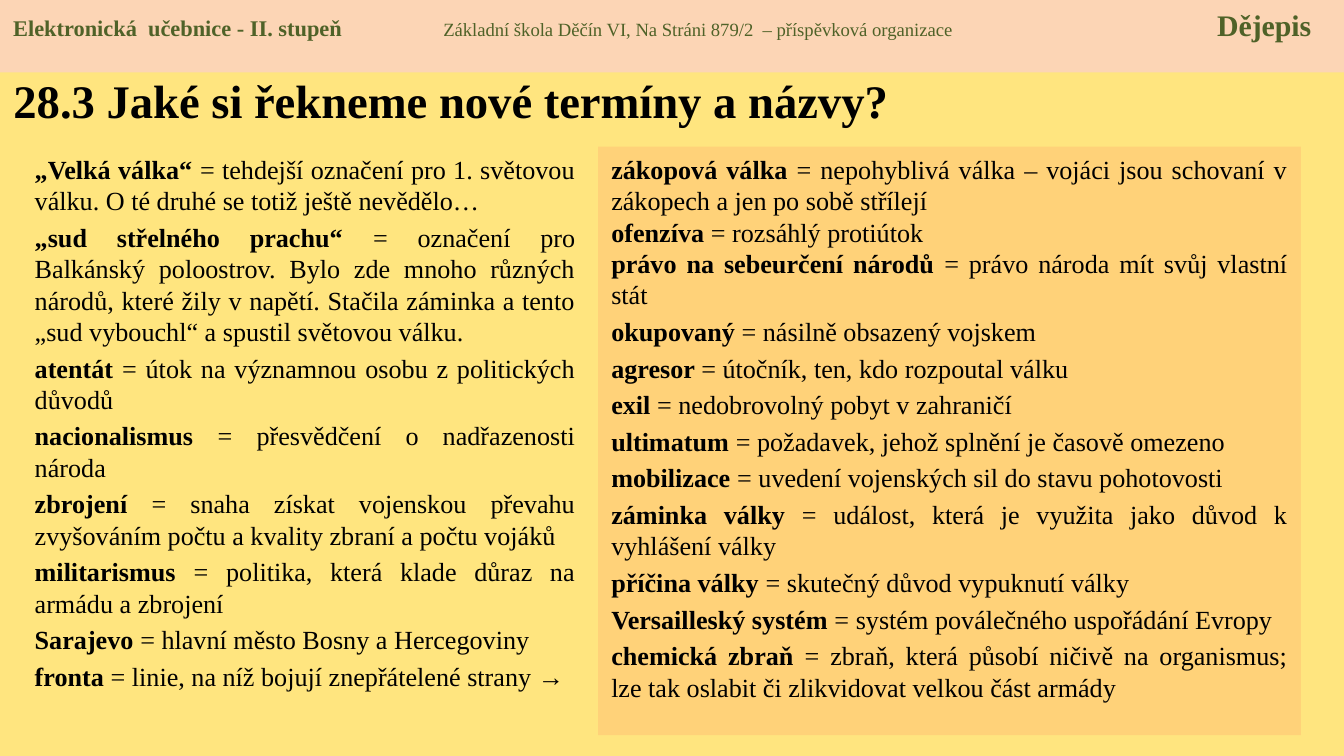
from typing import NamedTuple

from lxml import etree
from pptx import Presentation
from pptx.dml.color import RGBColor
from pptx.enum import shapes, text
from pptx.oxml.ns import qn
from pptx.util import Inches, Pt

FONT = "Times New Roman"
BLACK, GREEN = "000000", "4F6228"
CREAM, PEACH, AMBER = "FFE57F", "FCD5B5", "FFD279"
WIDTH = 10
HEIGHT = WIDTH * 9 / 16
BODY = 14
GAP = 0.2 * BODY


class Term(NamedTuple):
    name: str
    sense: str
    gap: float = GAP


class Box(NamedTuple):
    left: float
    top: float
    width: float
    height: float


LEFT = [
    Term("„Velká válka“", "tehdejší označení pro 1. světovou válku. O té druhé se totiž ještě nevědělo…"),
    Term("„sud střelného prachu“", "označení pro Balkánský poloostrov. Bylo zde mnoho různých národů, "
         "které žily v napětí. Stačila záminka a tento „sud vybouchl“ a spustil světovou válku."),
    Term("atentát", "útok na významnou osobu z politických důvodů"),
    Term("nacionalismus", "přesvědčení o nadřazenosti národa"),
    Term("zbrojení", "snaha získat vojenskou převahu zvyšováním počtu a kvality zbraní a počtu vojáků"),
    Term("militarismus", "politika, která klade důraz na armádu a zbrojení"),
    Term("Sarajevo", "hlavní město Bosny a Hercegoviny"),
    Term("fronta", "linie, na níž bojují znepřátelené strany →"),
]
RIGHT = [
    Term("zákopová válka", "nepohyblivá válka – vojáci jsou schovaní v zákopech a jen po sobě střílejí", 0),
    Term("ofenzíva", "rozsáhlý protiútok", 0),
    Term("právo na sebeurčení národů", "právo národa mít svůj vlastní stát", 0),
    Term("okupovaný", "násilně obsazený vojskem"),
    Term("agresor", "útočník, ten, kdo rozpoutal válku"),
    Term("exil", "nedobrovolný pobyt v zahraničí"),
    Term("ultimatum", "požadavek, jehož splnění je časově omezeno"),
    Term("mobilizace", "uvedení vojenských sil do stavu pohotovosti"),
    Term("záminka války", "událost, která je využita jako důvod k vyhlášení války"),
    Term("příčina války", "skutečný důvod vypuknutí války"),
    Term("Versailleský systém", "systém poválečného uspořádání Evropy"),
    Term("chemická zbraň", "zbraň, která působí ničivě na organismus; "
         "lze tak oslabit či zlikvidovat velkou část armády"),
]


def paint(target, color: str) -> None:
    target.rgb = RGBColor.from_string(color)


def set_all(target, **values) -> None:
    for key, value in values.items():
        setattr(target, key, value)


def place(box: Box) -> list:
    return [Inches(n) for n in box]


def add_run(para, words: str, size: float, color: str, bold: bool) -> None:
    run = para.add_run()
    run.text = words
    set_all(run.font, name=FONT, size=Pt(size), bold=bold)
    paint(run.font.color, color)


def add_panel(slide, box: Box, color: str):
    panel = slide.shapes.add_shape(shapes.MSO_SHAPE.RECTANGLE, *place(box))
    panel.shadow.inherit = False
    panel.fill.solid()
    paint(panel.fill.fore_color, color)
    panel.line.fill.background()
    return panel


def write_terms(frame, terms: list[Term]) -> None:
    set_all(frame, word_wrap=True, vertical_anchor=text.MSO_ANCHOR.TOP)
    for i, term in enumerate(terms):
        para = frame.add_paragraph() if i else frame.paragraphs[0]
        set_all(para, alignment=text.PP_ALIGN.JUSTIFY, space_before=Pt(term.gap))
        add_run(para, term.name + " ", BODY, BLACK, True)
        add_run(para, "= " + term.sense, BODY, BLACK, False)


def add_tabs(para, stops: list[tuple[float, str]]) -> None:
    tabs = etree.SubElement(para._p.get_or_add_pPr(), qn("a:tabLst"))
    for pos, side in stops:
        etree.SubElement(tabs, qn("a:tab"), pos=str(Inches(pos)), algn=side)


def add_header(slide) -> None:
    frame = add_panel(slide, Box(0, 0, WIDTH, 0.54), PEACH).text_frame
    set_all(frame, word_wrap=True, vertical_anchor=text.MSO_ANCHOR.TOP)
    para = frame.paragraphs[0]
    para.alignment = text.PP_ALIGN.LEFT
    add_tabs(para, [(3.2, "l"), (9.66, "r")])
    add_run(para, "Elektronická  učebnice - II. stupeň\t", 12, GREEN, True)
    add_run(para, "Základní škola Děčín VI, Na Stráni 879/2  – příspěvková organizace\t",
            10, GREEN, False)
    add_run(para, "Dějepis", 16, GREEN, True)


def add_title(slide) -> None:
    title = slide.shapes.title
    keys = ("left", "top", "width", "height")
    set_all(title, **dict(zip(keys, place(Box(0, 0.47, 7.42, 0.55)))))
    frame = title.text_frame
    set_all(frame, word_wrap=True, vertical_anchor=text.MSO_ANCHOR.MIDDLE)
    para = frame.paragraphs[0]
    para.alignment = text.PP_ALIGN.LEFT
    add_run(para, "28.3 Jaké si řekneme nové termíny a názvy?", 25, BLACK, True)


def main() -> None:
    deck = Presentation()
    set_all(deck, slide_width=Inches(WIDTH), slide_height=Inches(HEIGHT))
    slide = deck.slides.add_slide(deck.slide_layouts[5])
    back = slide.background.fill
    back.solid()
    paint(back.fore_color, CREAM)

    add_title(slide)
    left = slide.shapes.add_textbox(*place(Box(0.16, 1.09, 4.22, 4.38)))
    write_terms(left.text_frame, LEFT)
    add_header(slide)
    right = add_panel(slide, Box(4.45, 1.09, 5.23, 4.38), AMBER)
    write_terms(right.text_frame, RIGHT)
    deck.save("out.pptx")


if __name__ == "__main__":
    main()
